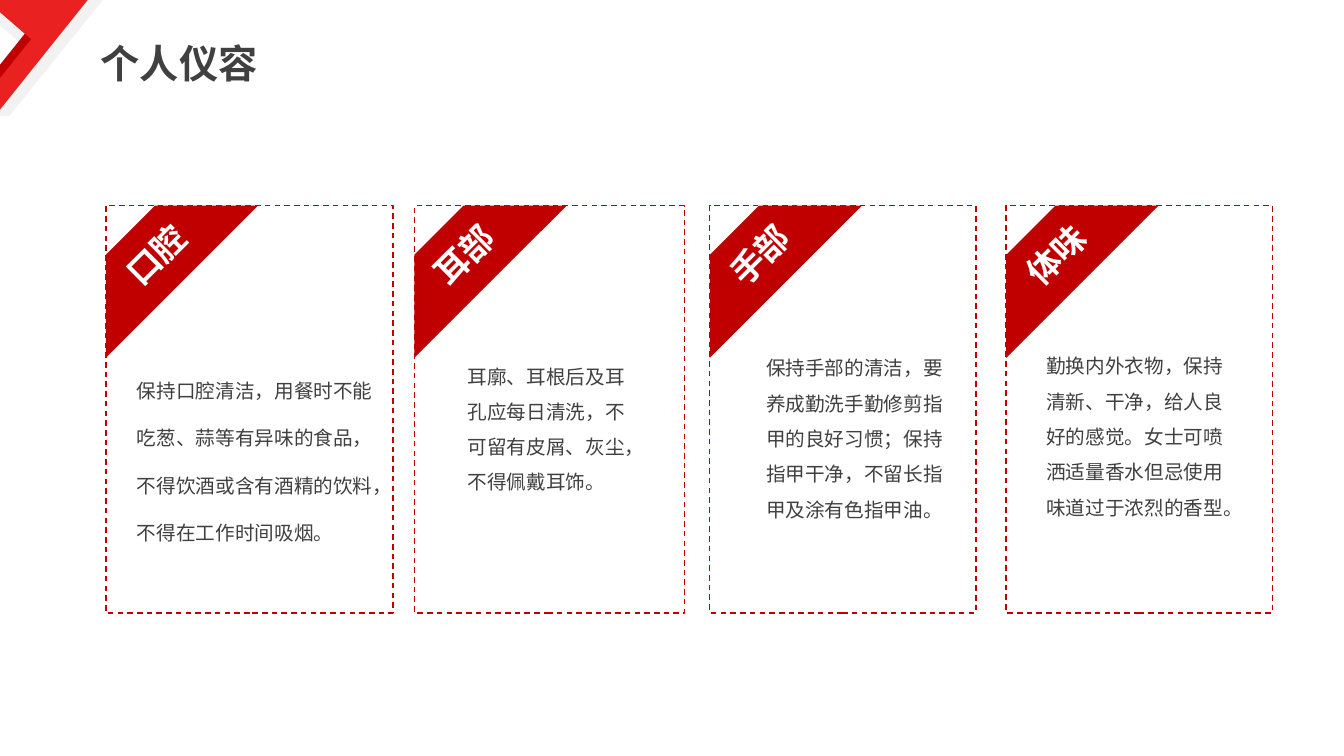
import pptx
import pptx.dml.color
import pptx.enum.dml
import pptx.enum.shapes
import pptx.enum.text
import pptx.oxml.ns
import pptx.util
from lxml import etree

PX = 9144  # 100 px to the inch
FONT = "Noto Sans CJK SC"
RED, BRIGHT_RED, GREY, DARK, WHITE = "C00000", "E92121", "F2F2F2", "404040", "FFFFFF"
SHAPES = pptx.enum.shapes.MSO_SHAPE
CARD_TOP, CARD_HEIGHT, STRIPE_SIZE = 204, 404, 151

# label, card left, card width, body box, line spacing, body text
CARDS = [
    ("口腔", 105, 285, (126, 348, 260, 191), 2.0,
     "保持口腔清洁，用餐时不能吃葱、蒜等有异味的食品，不得饮酒或含有酒精的饮料，不得在工作时间吸烟。"),
    ("耳部", 411, 268, (454, 345, 178, 147), 1.5,
     "耳廓、耳根后及耳孔应每日清洗，不可留有皮屑、灰尘，不得佩戴耳饰。"),
    ("手部", 704, 264, (750, 337, 210, 183), 1.5,
     "保持手部的清洁，要养成勤洗手勤修剪指甲的良好习惯；保持指甲干净，不留长指甲及涂有色指甲油。"),
    ("体味", 998, 264, (1028, 335, 204, 183), 1.5,
     "勤换内外衣物，保持清新、干净，给人良好的感觉。女士可喷洒适量香水但忌使用味道过于浓烈的香型。"),
]


def emu(box):
    return [value * PX for value in box]


def color(hex_string):
    return pptx.dml.color.RGBColor.from_string(hex_string)


def paint(shape, fill):
    shape.shadow.inherit = False
    shape.fill.solid()
    shape.fill.fore_color.rgb = color(fill)
    shape.line.fill.background()


def add_filled(slide, kind, box, fill, adjustment=None):
    shape = slide.shapes.add_shape(kind, *emu(box))
    paint(shape, fill)
    if adjustment is not None:
        shape.adjustments[0] = adjustment
    return shape


def add_polygon(slide, points, fill):
    builder = slide.shapes.build_freeform(*points[0], scale=PX)
    builder.add_line_segments(points[1:], close=True)
    paint(builder.convert_to_shape(), fill)


def add_dashed_frame(slide, box):
    frame = slide.shapes.add_shape(SHAPES.RECTANGLE, *emu(box))
    frame.shadow.inherit = False
    frame.fill.background()
    frame.line.color.rgb = color(RED)
    frame.line.width = pptx.util.Pt(1)
    frame.line.dash_style = pptx.enum.dml.MSO_LINE.DASH


def write_text(shape, text, size, hex_color, bold=False, spacing=1.0, wrap=False):
    frame = shape.text_frame
    frame_format = {
        "word_wrap": wrap,
        "auto_size": pptx.enum.text.MSO_AUTO_SIZE.SHAPE_TO_FIT_TEXT,
        "vertical_anchor": pptx.enum.text.MSO_ANCHOR.TOP,
    }
    for name, value in frame_format.items():
        setattr(frame, name, value)
    paragraph = frame.paragraphs[0]
    paragraph.alignment = pptx.enum.text.PP_ALIGN.LEFT
    paragraph.line_spacing = spacing
    run = paragraph.add_run()
    run.text = text
    run.font.color.rgb = color(hex_color)
    for name, value in {"size": pptx.util.Pt(size), "bold": bold, "name": FONT}.items():
        setattr(run.font, name, value)
    east_asian = etree.SubElement(run._r.get_or_add_rPr(), pptx.oxml.ns.qn("a:ea"))
    east_asian.set("typeface", FONT)


def add_corner(slide):
    add_filled(slide, SHAPES.PARALLELOGRAM, (-9, 0, 111, 115), GREY, 0.836)
    triangle = add_filled(slide, SHAPES.RIGHT_TRIANGLE, (-31, 0, 67, 55), GREY)
    triangle.rotation = 180
    add_polygon(slide, [(41, 13), (63, 13), (9, 81), (13, 85), (-10, 115),
                        (-41, 115), (-19, 88)], RED)
    add_polygon(slide, [(-14, 0), (87, 0), (63, 30), (-5, 115), (-30, 115),
                        (31, 39)], BRIGHT_RED)


def add_title(slide, text):
    title = slide.shapes.title
    title.left, title.top, title.width, title.height = emu((90, 25, 177, 62))
    write_text(title, text, 28, DARK, bold=True, spacing=1.2)


def add_card(slide, label, left, width, body_box, spacing, body):
    add_filled(slide, SHAPES.DIAGONAL_STRIPE,
               (left, CARD_TOP, STRIPE_SIZE, STRIPE_SIZE), RED, 0.323)
    add_dashed_frame(slide, (left, CARD_TOP, width, CARD_HEIGHT))
    label_box = slide.shapes.add_textbox(*emu((left + 6, 227, 88, 50)))
    label_box.rotation = 315.2
    write_text(label_box, label, 24, WHITE, bold=True)
    body_shape = slide.shapes.add_textbox(*emu(body_box))
    write_text(body_shape, body, 14, DARK, spacing=spacing, wrap=True)


def main():
    presentation = pptx.Presentation()
    presentation.slide_width, presentation.slide_height = emu((1333, 750))
    slide = presentation.slides.add_slide(presentation.slide_layouts[5])
    add_corner(slide)
    add_title(slide, "个人仪容")
    for card in CARDS:
        add_card(slide, *card)
    presentation.save("out.pptx")


if __name__ == "__main__":
    main()
